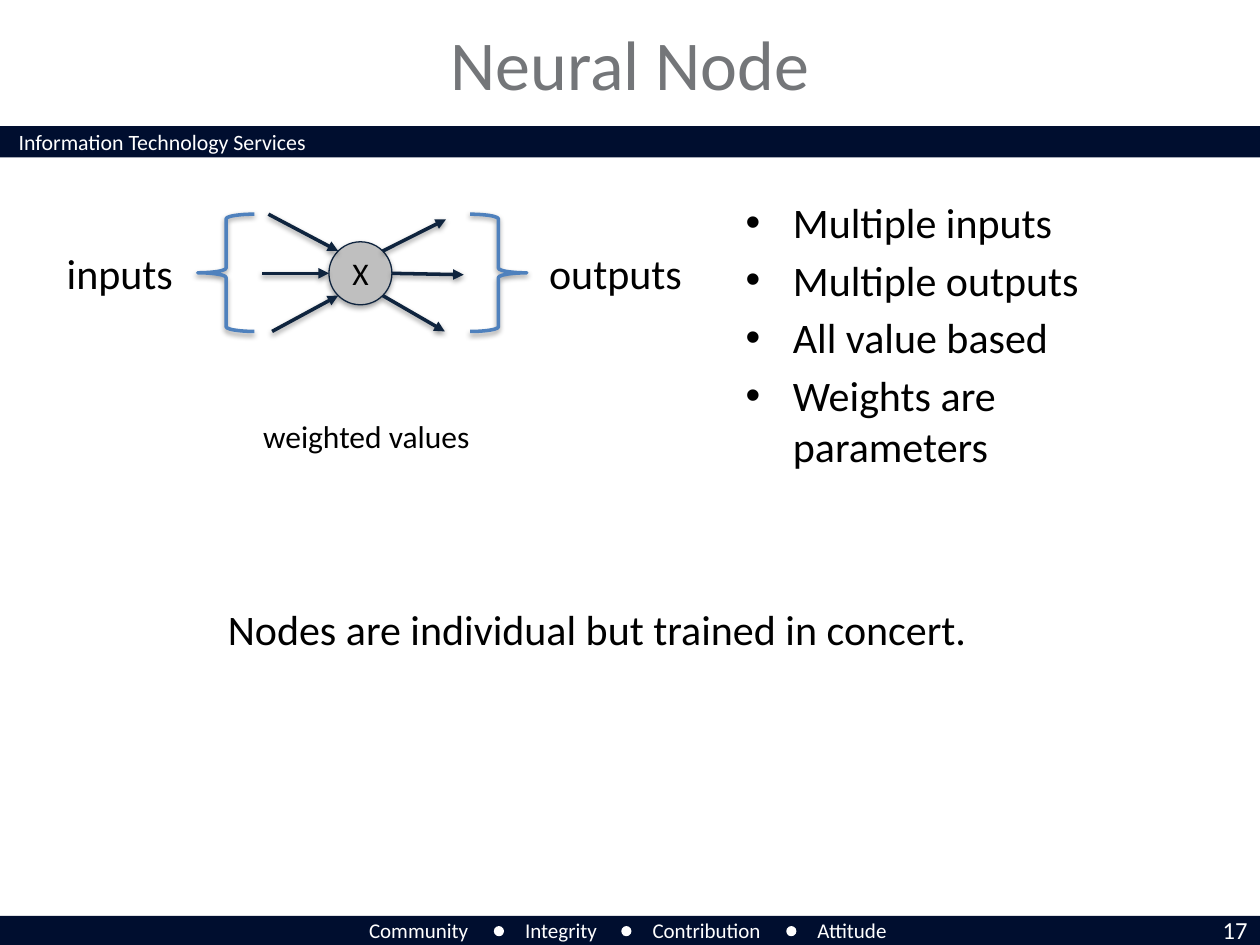
from math import cos, sin, radians
from lxml import etree
from pptx import Presentation
from pptx.dml.color import RGBColor
from pptx.enum import shapes as kinds, text as txt
from pptx.oxml.ns import qn
from pptx.util import Pt

# Content: lengths in points
COLORS = dict(navy="000E2F", white="FFFFFF", grey="747679", black="000000",
              node="BFBFBF", ink="0F243E", brace="4F81BD")
FONT = "Calibri"
BARS = [72, 523.4]
VALUES = [("Community", 203.8, 72), ("Integrity", 293, 57.6),
          ("Contribution", 365.8, 79.2), ("Attitude", 460, 56.2)]
DOTS = [282.2, 355, 449.3]
LABELS = [  # words, box, size
    ("inputs", (31, 138.2, 75.6, 36), 24),
    ("outputs", (306.7, 138.2, 91.4, 36), 24),
    ("weighted values", (143.3, 234.7, 133.9, 28.8), 18),
    ("Nodes are individual but trained in concert.", (123.1, 341.3, 440.6, 36), 24),
]
POINTS = ["Multiple inputs", "Multiple outputs", "All value based",
          "Weights are parameters"]
NODE = (206, 156.2, 18)  # centre x, centre y, radius
INS = [(180, (149.8, 156.2)), (225, (153.4, 122.4)), (135, (155.5, 189.4))]
OUTS = [(0, (265, 157)), (-45, (254.9, 125.3)), (45, (254.2, 189.4))]
BRACES = [(113, 0), (268.6, 180)]  # left, rotation

deck = Presentation()
deck.slide_width, deck.slide_height = Pt(720), Pt(540)
slide = deck.slides.add_slide(deck.slide_layouts[6])
KIND, ALIGN = kinds.MSO_SHAPE, txt.PP_ALIGN


def rgb(name):
    return RGBColor.from_string(COLORS[name])


def style(para, size, color, align=None):
    para.font.name, para.font.size = FONT, Pt(size)
    para.font.color.rgb = rgb(color)
    para.alignment = align


def label(words, box, size, color="black", align=None, wrap=False):
    frame = slide.shapes.add_textbox(*map(Pt, box)).text_frame
    frame.word_wrap = wrap
    frame.text = words
    for para in frame.paragraphs:
        style(para, size, color, align)
    return frame


def shape(kind, box, fill=None, line=None, width=0.75):
    item = slide.shapes.add_shape(kind, *map(Pt, box))
    item.shadow.inherit = False
    if fill:
        item.fill.solid()
        item.fill.fore_color.rgb = rgb(fill)
    else:
        item.fill.background()
    if line:
        item.line.color.rgb, item.line.width = rgb(line), Pt(width)
    else:
        item.line.fill.background()
    return item


def shade(item, alpha=38, dist=1.6):
    props = item._element.spPr
    list_ = props.find(qn("a:effectLst"))
    if list_ is None:
        list_ = etree.SubElement(props, qn("a:effectLst"))
    drop = etree.SubElement(list_, qn("a:outerShdw"), blurRad=str(Pt(3.1)),
                            dist=str(Pt(dist)), dir="5400000", rotWithShape="0")
    tint = etree.SubElement(drop, qn("a:srgbClr"), val=COLORS["black"])
    etree.SubElement(tint, qn("a:alpha"), val=str(alpha * 1000))


def arrow(start, end):
    item = slide.shapes.add_connector(kinds.MSO_CONNECTOR.STRAIGHT,
                                      *map(Pt, start + end))
    item.line.color.rgb, item.line.width = rgb("ink"), Pt(2)
    etree.SubElement(item.line._get_or_add_ln(), qn("a:tailEnd"), type="triangle")
    shade(item)


def rim(angle):
    x, y, r = NODE
    turn = radians(angle)
    return x + r * cos(turn), y + r * sin(turn)


# Header and footer
for top in BARS:
    shape(KIND.RECTANGLE, (0, top, 720, 18), "navy")
label("Information Technology Services", (3.6, 69.8, 244.8, 23), 12.5, "white", wrap=True)
for words, left, wide in VALUES:
    label(words, (left, 520.6, wide, 21.6), 12, "white")
for left in DOTS:
    shape(KIND.OVAL, (left, 529.2, 5.8, 5.8), "white")
label("17", (665.3, 519.1, 54.7, 24.5), 14, "white", ALIGN.RIGHT, True)

# Title
head = label("Neural Node", (72, 7.2, 576, 57.6), 40, "grey", ALIGN.CENTER, True)
head.vertical_anchor = txt.MSO_ANCHOR.MIDDLE

# Node with its arrows and braces
x, y, r = NODE
node = shape(KIND.OVAL, (x - r, y - r, 2 * r, 2 * r), "node", "ink")
shade(node, 35, 1.8)
frame = node.text_frame
frame.text, frame.word_wrap = "X", False
frame.vertical_anchor = txt.MSO_ANCHOR.MIDDLE
style(frame.paragraphs[0], 18, "black", ALIGN.CENTER)
for angle, far in INS:
    arrow(far, rim(angle))
for angle, far in OUTS:
    arrow(rim(angle), far)
for left, turn in BRACES:
    brace = shape(KIND.LEFT_BRACE, (left, 122.4, 32.4, 67), None, "brace", 2)
    brace.rotation = turn
    shade(brace)

# Labels
for words, box, size in LABELS:
    label(words, box, size)

# Bullet list
notes = label("\n".join(POINTS), (419, 108.7, 265, 396), 24, wrap=True)
for i, para in enumerate(notes.paragraphs):
    props = para._p.get_or_add_pPr()
    props.set("marL", str(Pt(27)))
    props.set("indent", str(Pt(-27)))
    mark = etree.Element(qn("a:buChar"), char="•")
    face = etree.Element(qn("a:buFont"), typeface="Arial")
    props.insert(0, mark)
    props.insert(0, face)
    if i:
        para.space_before = Pt(4.2)

deck.save("out.pptx")
